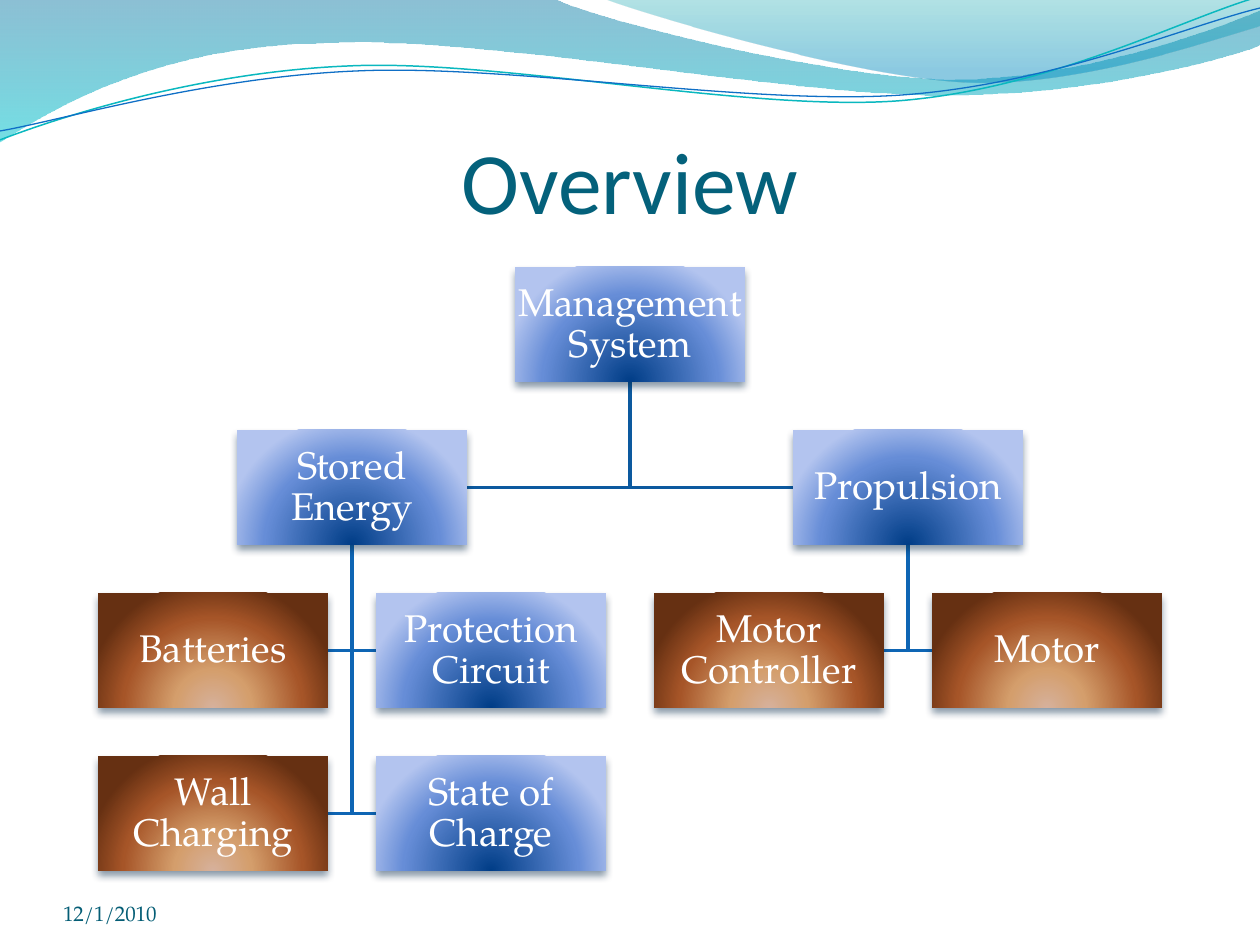
"""Build an overview slide with a system hierarchy under a wave header."""
from dataclasses import dataclass
from math import cos, radians, sin
from typing import Optional

from lxml.etree import SubElement
from pptx import Presentation
from pptx.dml.color import RGBColor
from pptx.enum.shapes import MSO_SHAPE
from pptx.enum.text import MSO_ANCHOR, PP_ALIGN
from pptx.oxml.ns import qn
from pptx.util import Inches, Pt

PX = Inches(1) / 126
BOX_W, BOX_H = 230, 115
LEFT, TOP = 98, 267
HALF_COL, ROW = 139, 163

Point = tuple[float, float]
Segment = tuple[Point, ...]


@dataclass(frozen=True)
class Stop:
    pos: int
    color: str
    alpha: int = 100


@dataclass(frozen=True)
class Theme:
    body_font: str = "TeX Gyre Pagella"
    title_font: str = "Calibri"
    title_size: int = 50
    node_size: int = 22
    date_size: int = 12
    title: str = "04617B"
    date: str = "045D75"
    node_text: str = "FFFFFF"
    shadow: str = "042747"
    links: tuple[str, ...] = ("0C599F", "0E65B4")
    blue: tuple[Stop, ...] = (Stop(0, "003D87"), Stop(68, "668DD7"), Stop(100, "B3C4EF"))
    brown: tuple[Stop, ...] = (
        Stop(0, "D6B19C"), Stop(30, "D49E6C"), Stop(70, "A65528"), Stop(100, "663012"))
    back_wave: tuple[Stop, ...] = (Stop(0, "0074A1", 45), Stop(100, "00C6CF", 55))
    front_wave: tuple[Stop, ...] = (Stop(0, "00A1A9", 30), Stop(80, "008BBF", 45))
    teal_line: str = "0AB8BF"
    blue_line: str = "0F6FC6"


THEME = Theme()


@dataclass(frozen=True)
class Node:
    text: str
    half_col: int
    row: int
    stops: tuple[Stop, ...] = THEME.blue
    parent: Optional["Node"] = None

    @property
    def x(self) -> int:
        return LEFT + self.half_col * HALF_COL

    @property
    def y(self) -> int:
        return TOP + self.row * ROW


@dataclass(frozen=True)
class Outline:
    start: Point
    segments: tuple[Segment, ...]
    stops: tuple[Stop, ...] = ()
    line: str = ""
    width: float = 0
    tilt: float = 0


ROOT = Node("Management System", 3, 0)
ENERGY = Node("Stored Energy", 1, 1, parent=ROOT)
PROPULSION = Node("Propulsion", 5, 1, parent=ROOT)
NODES = (
    ROOT,
    ENERGY,
    Node("Batteries", 0, 2, THEME.brown, ENERGY),
    Node("Protection Circuit", 2, 2, parent=ENERGY),
    Node("Wall Charging", 0, 3, THEME.brown, ENERGY),
    Node("State of Charge", 2, 3, parent=ENERGY),
    PROPULSION,
    Node("Motor Controller", 4, 2, THEME.brown, PROPULSION),
    Node("Motor", 6, 2, THEME.brown, PROPULSION),
)

WAVES = (
    Outline((0, 0), (
        ((554, -1),),
        ((600, 21), (837, 79), (955, 79)),
        ((1075, 79), (1207, 33), (1260, 11)),
        ((1261, 45),),
        ((1239, 55), (1096, 96), (940, 95)),
        ((781, 95), (481, 35), (324, 43)),
        ((163, 45), (58, 105), (-1, 142)),
    ), stops=THEME.back_wave),
    Outline((604, -1), (
        ((641, 14), (859, 78), (969, 82)),
        ((1079, 86), (1211, 40), (1260, 26)),
        ((1260, 0),),
    ), stops=THEME.front_wave),
    Outline((0, 140), (
        ((60, 117), (199, 72), (349, 66)),
        ((498, 59), (747, 112), (898, 101)),
        ((1050, 89), (1182, 19), (1258, -3)),
    ), line=THEME.teal_line, width=0.85, tilt=-2.7),
    Outline((0, 131), (
        ((59, 121), (207, 77), (357, 71)),
        ((508, 64), (752, 106), (903, 95)),
        ((1053, 84), (1186, 26), (1260, 8)),
    ), line=THEME.blue_line, width=0.75, tilt=-2.7),
)


def px(n: float) -> int:
    return round(n * PX)


def turn(point: Point, degrees: float) -> Point:
    (x, y), a = point, radians(degrees)
    return x * cos(a) - y * sin(a), x * sin(a) + y * cos(a)


def add_color(parent, color: str, alpha: int) -> None:
    clr = SubElement(parent, qn("a:srgbClr"), val=color)
    if alpha < 100:
        SubElement(clr, qn("a:alpha"), val=str(alpha * 1000))


def set_gradient(sp, stops: tuple[Stop, ...], radial: bool) -> None:
    sp.fill.background()
    fill = sp._element.spPr.find(qn("a:noFill"))
    grad = SubElement(sp._element.spPr, qn("a:gradFill"), rotWithShape="1")
    fill.getparent().replace(fill, grad)
    gs_list = SubElement(grad, qn("a:gsLst"))
    for stop in stops:
        gs = SubElement(gs_list, qn("a:gs"), pos=str(stop.pos * 1000))
        add_color(gs, stop.color, stop.alpha)
    if radial:
        circle = SubElement(grad, qn("a:path"), path="circle")
        SubElement(circle, qn("a:fillToRect"), l="50000", t="130000", r="50000", b="-30000")
    else:
        SubElement(grad, qn("a:lin"), ang="5400000", scaled="0")


def bend(sp, segments: tuple[Segment, ...]) -> None:
    lines = iter(list(sp._element.iter(qn("a:lnTo"))))
    for seg in segments:
        steps = [next(lines) for _ in seg]
        if len(seg) == 3:
            curve = steps[0].makeelement(qn("a:cubicBezTo"))
            steps[0].addprevious(curve)
            for step in steps:
                curve.append(step[0])
                step.getparent().remove(step)


def add_outline(s, outline: Outline) -> None:
    points = [outline.start, *(p for seg in outline.segments for p in seg)]
    first, *rest = [tuple(map(px, turn(p, -outline.tilt))) for p in points]
    builder = s.shapes.build_freeform(*first, scale=1.0)
    builder.add_line_segments(rest, close=bool(outline.stops))
    sp = builder.convert_to_shape()
    bend(sp, outline.segments)
    sp.shadow.inherit = False
    if outline.tilt:
        cx, cy = turn((sp.left + sp.width / 2, sp.top + sp.height / 2), outline.tilt)
        sp.left, sp.top = round(cx - sp.width / 2), round(cy - sp.height / 2)
        sp.rotation = outline.tilt
    if outline.stops:
        set_gradient(sp, outline.stops, radial=False)
        sp.line.fill.background()
    else:
        sp.fill.background()
        sp.line.color.rgb = RGBColor.from_string(outline.line)
        sp.line.width = Pt(outline.width)


def add_link(s, node: Node) -> None:
    trunk = node.parent.x + BOX_W / 2
    mid = node.y + BOX_H / 2
    edge = node.x if node.x > trunk else node.x + BOX_W
    add_outline(s, Outline((trunk, node.parent.y + BOX_H), (((trunk, mid),), ((edge, mid),)),
                           line=THEME.links[node.parent.row], width=2))


def set_text(sp, text: str, font: str, size: int, color: str, align, anchor, insets) -> None:
    tf = sp.text_frame
    tf.word_wrap = True
    tf.vertical_anchor = anchor
    tf.margin_left, tf.margin_top, tf.margin_right, tf.margin_bottom = map(px, insets)
    p = tf.paragraphs[0]
    p.alignment = align
    r = p.add_run()
    r.text = text
    r.font.name, r.font.size = font, Pt(size)
    r.font.color.rgb = RGBColor.from_string(color)


def add_node(s, node: Node) -> None:
    sp = s.shapes.add_shape(MSO_SHAPE.RECTANGLE, px(node.x), px(node.y), px(BOX_W), px(BOX_H))
    sp.line.fill.background()
    set_gradient(sp, node.stops, radial=True)
    sp.shadow.inherit = False
    effects = sp._element.spPr.find(qn("a:effectLst"))
    shadow = SubElement(effects, qn("a:outerShdw"), blurRad=str(Pt(4.5)), dist=str(Pt(3)),
                        dir="5400000", rotWithShape="0")
    add_color(shadow, THEME.shadow, 48)
    set_text(sp, node.text, THEME.body_font, THEME.node_size, THEME.node_text,
             PP_ALIGN.CENTER, MSO_ANCHOR.MIDDLE, (2, 2, 2, 2))
    sp.text_frame.paragraphs[0].line_spacing = 0.9


def main() -> None:
    prs = Presentation()
    prs.slide_width, prs.slide_height = px(1260), px(945)
    s = prs.slides.add_slide(prs.slide_layouts[6])
    for wave in WAVES:
        add_outline(s, wave)
    title = s.shapes.add_textbox(px(63), px(97), px(1134), px(158))
    set_text(title, "Overview", THEME.title_font, THEME.title_size, THEME.title,
             PP_ALIGN.CENTER, MSO_ANCHOR.MIDDLE, (0, 6, 0, 0))
    for node in NODES:
        if node.parent:
            add_link(s, node)
    for node in NODES:
        add_node(s, node)
    date = s.shapes.add_textbox(px(63), px(876), px(294), px(50))
    set_text(date, "12/1/2010", THEME.body_font, THEME.date_size, THEME.date,
             PP_ALIGN.LEFT, MSO_ANCHOR.BOTTOM, (0, 0, 0, 0))
    prs.save("out.pptx")


if __name__ == "__main__":
    main()
